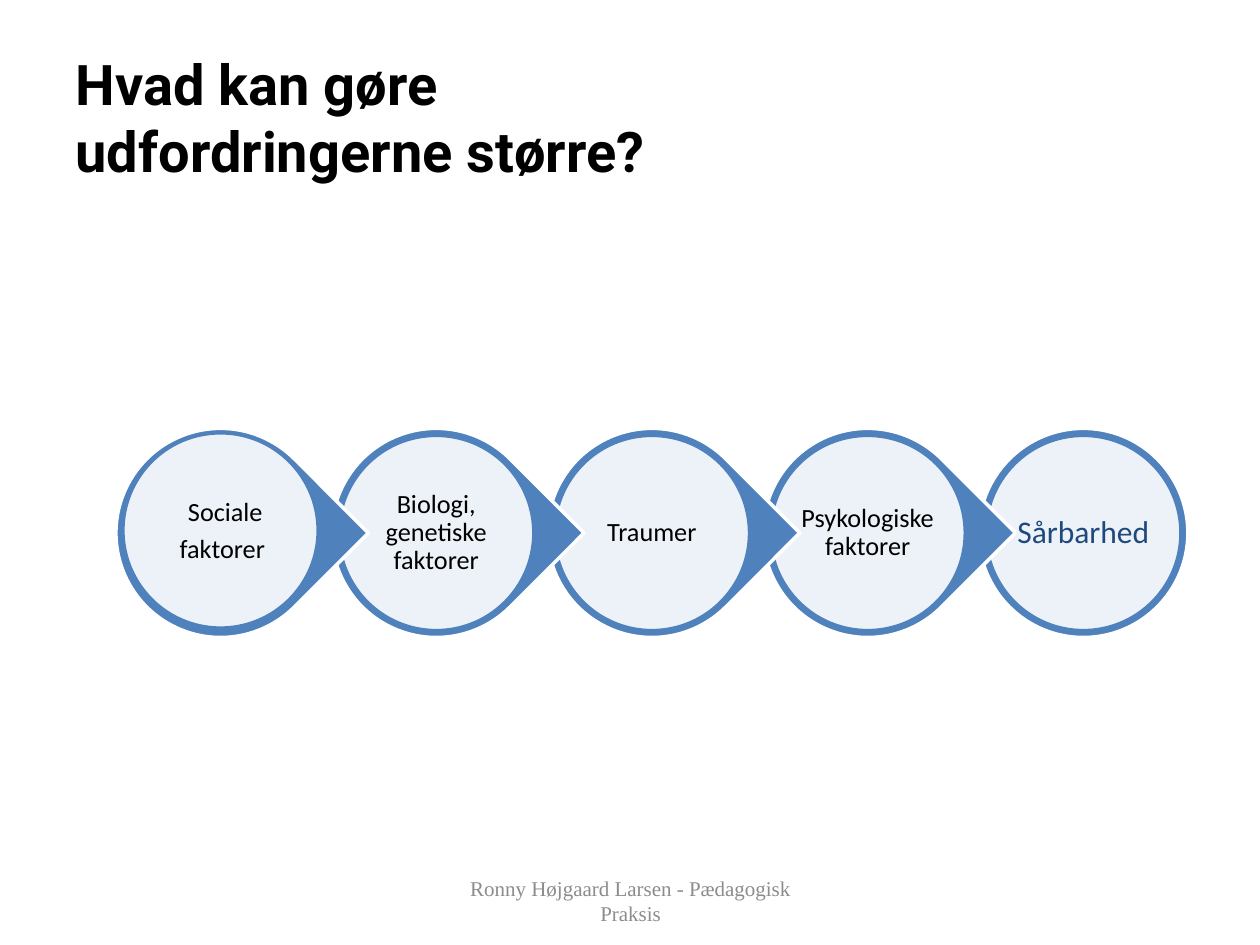
from dataclasses import dataclass

from lxml.etree import SubElement
from pptx import Presentation
from pptx.dml.color import RGBColor
from pptx.enum.shapes import MSO_SHAPE
from pptx.enum.text import MSO_ANCHOR, MSO_AUTO_SIZE, PP_ALIGN
from pptx.oxml.ns import qn
from pptx.util import Inches, Pt

COLS, ROWS = 100, 75


@dataclass(frozen=True)
class Theme:
    blue: str = "4F81BD"
    navy: str = "1F497D"
    white: str = "FFFFFF"
    black: str = "000000"
    grey: str = "8C8C8C"
    heading_font: str = "Roboto"
    body_font: str = "Calibri"
    footer_font: str = "Times New Roman"
    heading: float = 32
    factor: float = 15
    result: float = 18
    footer: float = 12
    outline: float = 2
    disc_opacity: int = 90


@dataclass(frozen=True)
class Box:
    col: float
    row: float
    cols: float
    rows: float

    def inset(self, gap: float, dx: float = 0, dy: float = 0) -> "Box":
        return Box(self.col + gap + dx, self.row + gap + dy,
                   self.cols - 2 * gap, self.rows - 2 * gap)


@dataclass(frozen=True)
class Style:
    font: str
    size: float
    color: str
    bold: bool = False


@dataclass(frozen=True)
class Step:
    lines: tuple[str, ...]
    style: Style
    margin: float = 0.2
    shape: MSO_SHAPE = MSO_SHAPE.TEAR
    rotation: float = 45
    disc_dy: float = 0
    label_dx: float = 0
    label_dy: float = 0


THEME = Theme()
HEADING = Style(THEME.heading_font, THEME.heading, THEME.black, True)
FACTOR = Style(THEME.body_font, THEME.factor, THEME.black)
RESULT = Style(THEME.body_font, THEME.result, THEME.navy)
FOOTER = Style(THEME.footer_font, THEME.footer, THEME.grey)

TITLE_BOX = Box(5, 3, 90, 12.5)
FOOTER_BOX = Box(34.2, 69.5, 31.7, 4)
FIRST_STEP = Box(9.2, 34, 16.6, 16.6)
PITCH = 17.12
DISC_GAP, LABEL_GAP = 0.55, 2.75

STEPS = (
    Step((" Sociale", "faktorer"), FACTOR, disc_dy=-0.2, label_dx=0.15, label_dy=-0.1),
    Step(("Biologi, genetiske faktorer",), FACTOR),
    Step(("Traumer",), FACTOR),
    Step(("Psykologiske faktorer",), FACTOR),
    Step(("Sårbarhed",), RESULT, margin=0.3, shape=MSO_SHAPE.OVAL, rotation=0),
)


def grid(units: float) -> int:
    return Inches(units * 10 / COLS)


def place(box: Box) -> tuple[int, int, int, int]:
    return grid(box.col), grid(box.row), grid(box.cols), grid(box.rows)


def add_run(p, text: str, style: Style) -> None:
    r = p.add_run()
    r.text = text
    r.font.name = style.font
    r.font.size = Pt(style.size)
    r.font.bold = style.bold
    r.font.color.rgb = RGBColor.from_string(style.color)


def add_round(shapes, kind: MSO_SHAPE, box: Box, fill: str, line: str):
    sp = shapes.add_shape(kind, *place(box))
    sp.shadow.inherit = False
    sp.fill.solid()
    sp.fill.fore_color.rgb = RGBColor.from_string(fill)
    sp.line.color.rgb = RGBColor.from_string(line)
    sp.line.width = Pt(THEME.outline)
    return sp


def set_opacity(sp, percent: int) -> None:
    color = sp.fill._xPr.find(qn("a:solidFill"))[0]
    SubElement(color, qn("a:alpha")).set("val", str(percent * 1000))


def add_label(shapes, box: Box, lines: tuple[str, ...], style: Style):
    tf = shapes.add_textbox(*place(box)).text_frame
    tf.word_wrap = True
    tf.auto_size = MSO_AUTO_SIZE.NONE
    tf.vertical_anchor = MSO_ANCHOR.MIDDLE
    for i, text in enumerate(lines):
        p = tf.add_paragraph() if i else tf.paragraphs[0]
        p.alignment = PP_ALIGN.CENTER
        add_run(p, text, style)
    return tf


def add_step(shapes, index: int, step: Step) -> None:
    box = Box(FIRST_STEP.col + index * PITCH, FIRST_STEP.row,
              FIRST_STEP.cols, FIRST_STEP.rows)
    pointer = add_round(shapes, step.shape, box, THEME.blue, THEME.white)
    pointer.rotation = step.rotation
    disc = add_round(shapes, MSO_SHAPE.OVAL, box.inset(DISC_GAP, dy=step.disc_dy),
                     THEME.white, THEME.blue)
    set_opacity(disc, THEME.disc_opacity)
    label_box = box.inset(LABEL_GAP, step.label_dx, step.label_dy)
    tf = add_label(shapes, label_box, step.lines, step.style)
    tf.margin_left = tf.margin_right = grid(step.margin)
    tf.margin_top = tf.margin_bottom = grid(step.margin)
    for p in tf.paragraphs:
        p.line_spacing = 0.9
        p.space_after = Pt(step.style.size * 0.35)


def add_title(s, lines: tuple[str, ...]) -> None:
    title = s.shapes.title
    title.left, title.top, title.width, title.height = place(TITLE_BOX)
    tf = title.text_frame
    tf.auto_size = MSO_AUTO_SIZE.NONE
    tf.vertical_anchor = MSO_ANCHOR.MIDDLE
    p = tf.paragraphs[0]
    p.alignment = PP_ALIGN.LEFT
    for i, text in enumerate(lines):
        if i:
            p.add_line_break()
        add_run(p, text, HEADING)


def main() -> None:
    prs = Presentation()
    prs.slide_width, prs.slide_height = grid(COLS), grid(ROWS)
    s = prs.slides.add_slide(prs.slide_layouts.get_by_name("Title Only"))
    add_title(s, ("Hvad kan gøre ", "udfordringerne større?"))
    chain = s.shapes.add_group_shape()
    for index, step in reversed(list(enumerate(STEPS))):
        add_step(chain.shapes, index, step)
    add_label(s.shapes, FOOTER_BOX,
              ("Ronny Højgaard Larsen - Pædagogisk Praksis",), FOOTER)
    prs.save("out.pptx")


if __name__ == "__main__":
    main()
